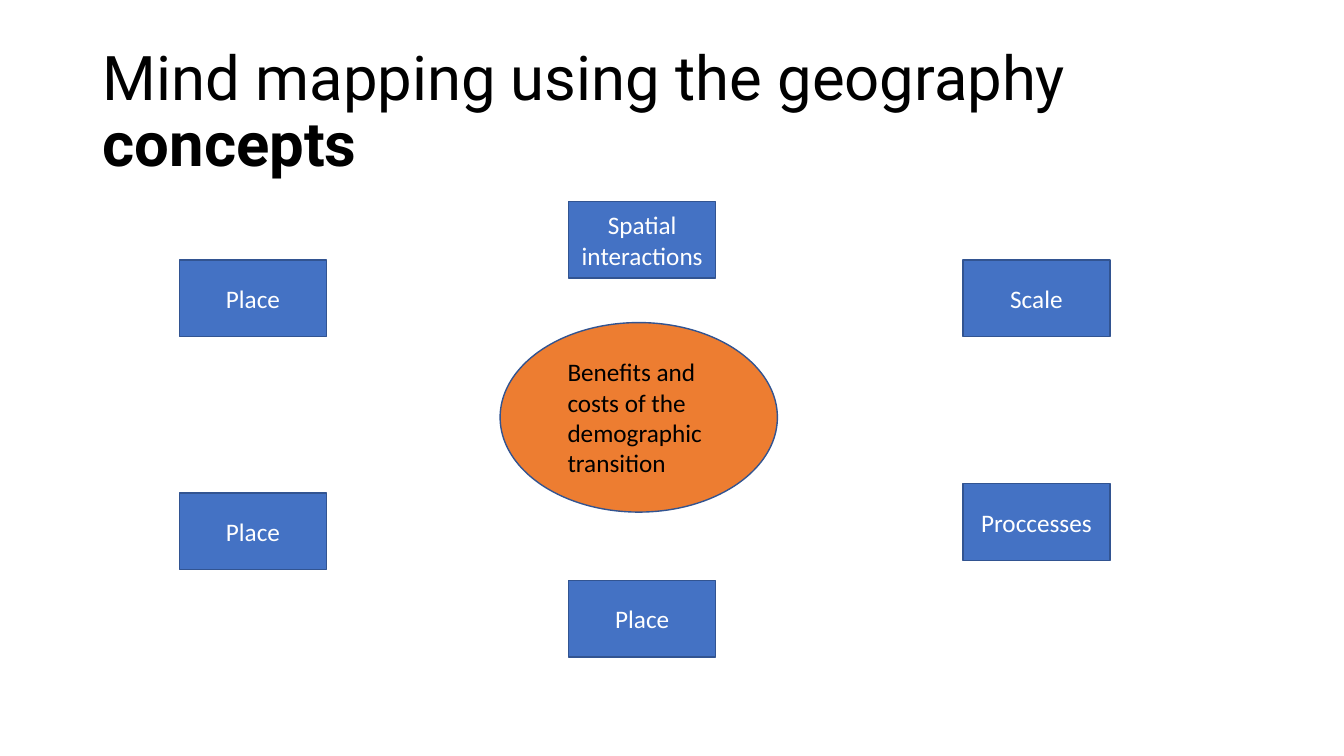
from dataclasses import dataclass

from pptx import Presentation
from pptx import util as u
from pptx.dml.color import RGBColor as Rgb
from pptx.enum import shapes, text


@dataclass(frozen=True)
class Theme:
    ink: str = "000000"
    pale: str = "FFFFFF"
    node: str = "4472C4"
    hub: str = "ED7D31"
    edge: str = "325491"
    head: str = "Roboto"
    body: str = "Calibri"
    big: int = 44
    small: int = 18
    rule: int = 1


class Map:
    """A mind map slide; every box is (left, top, width, height) in percent."""

    def __init__(self, deck, theme):
        self.theme = theme
        self.size = deck.slide_width, deck.slide_height
        self.slide = deck.slides.add_slide(deck.slide_layouts[5])

    def place(self, box):
        return [u.Emu(round(part * side / 100))
                for part, side in zip(box, self.size * 2)]

    def run(self, para, words, font, size, color, bold=False):
        run = para.add_run()
        run.text = words
        run.font.name, run.font.size = font, u.Pt(size)
        run.font.bold = bold
        run.font.color.rgb = Rgb.from_string(color)

    def title(self, box, *runs):
        head = self.slide.shapes.title
        head.left, head.top, head.width, head.height = self.place(box)
        frame = head.text_frame
        frame.word_wrap = True
        frame.auto_size = text.MSO_AUTO_SIZE.NONE
        frame.vertical_anchor = text.MSO_ANCHOR.MIDDLE
        para = frame.paragraphs[0]
        para.alignment, para.line_spacing = text.PP_ALIGN.LEFT, 0.9
        for words, bold in runs:
            self.run(para, words, self.theme.head, self.theme.big,
                     self.theme.ink, bold)

    def shape(self, kind, box, fill):
        item = self.slide.shapes.add_shape(kind, *self.place(box))
        item.shadow.inherit = False
        item.fill.solid()
        item.fill.fore_color.rgb = Rgb.from_string(fill)
        item.line.color.rgb = Rgb.from_string(self.theme.edge)
        item.line.width = u.Pt(self.theme.rule)
        return item

    def node(self, words, box):
        item = self.shape(shapes.MSO_SHAPE.RECTANGLE, box, self.theme.node)
        frame = item.text_frame
        frame.word_wrap = True
        frame.vertical_anchor = text.MSO_ANCHOR.MIDDLE
        para = frame.paragraphs[0]
        para.alignment = text.PP_ALIGN.CENTER
        self.run(para, words, self.theme.body, self.theme.small,
                 self.theme.pale)

    def hub(self, box):
        self.shape(shapes.MSO_SHAPE.OVAL, box, self.theme.hub)

    def label(self, words, box):
        frame = self.slide.shapes.add_textbox(*self.place(box)).text_frame
        frame.word_wrap = True
        frame.auto_size = text.MSO_AUTO_SIZE.SHAPE_TO_FIT_TEXT
        self.run(frame.paragraphs[0], words, self.theme.body,
                 self.theme.small, self.theme.ink)


def main():
    deck = Presentation()
    deck.slide_width, deck.slide_height = u.Inches(13.33), u.Inches(7.5)
    mind = Map(deck, Theme())
    mind.title((6.9, 5.33, 86.27, 19.33),
               ("Mind mapping using the geography ", False),
               ("concepts", True))
    mind.hub((37.21, 42.67, 20.63, 25.07))
    mind.label("Benefits and costs of the demographic transition",
               (41.49, 46.53, 14.1, 17.47))

    left, mid, right = 13.35, 42.31, 71.64
    upper = 34.4
    nodes = [
        ("Place", left, upper),
        ("Place", left, 65.2),
        ("Scale", right, upper),
        ("Spatial interactions", mid, 26.67),
        ("Proccesses", right, 64),
        ("Place", mid, 76.8),
    ]
    for words, x, y in nodes:
        mind.node(words, (x, y, 10.95, 10.13))
    deck.save("out.pptx")


if __name__ == "__main__":
    main()
